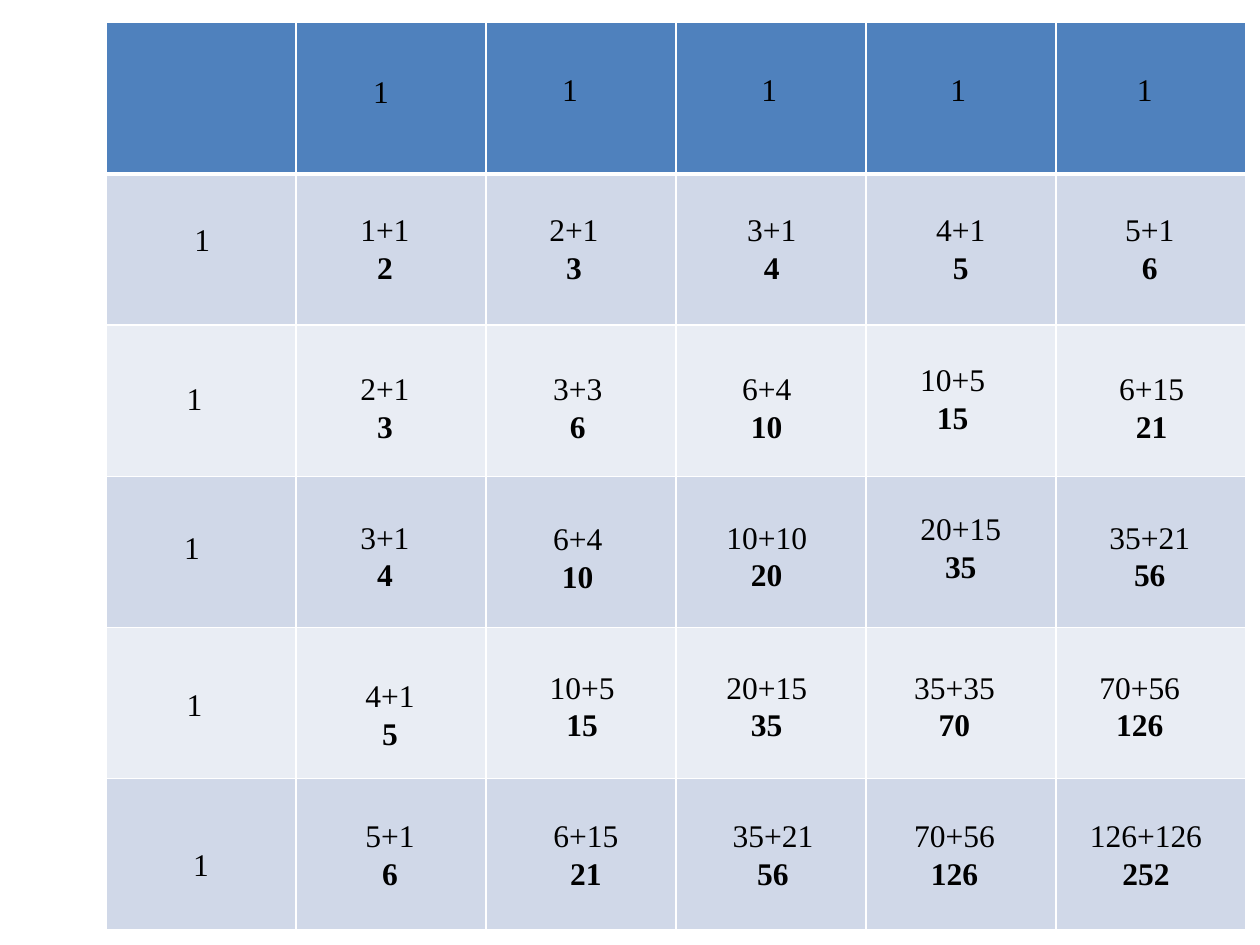
import pptx
import pptx.util
import pptx.dml.color
import pptx.enum.text
import pptx.oxml
import pptx.oxml.ns

Inches = pptx.util.Inches
Pt = pptx.util.Pt

SIZE = 6
HEAD = "4F81BD"
BANDS = ["E9EDF4", "D0D8E8"]
ROWS = [
    [("1", 2.02, 0.34), ("1", 3.52, 0.33), ("1", 5.1, 0.33),
     ("1", 6.6, 0.33), ("1", 8.08, 0.33)],
    [("1", 0.6, 1.52), ("1+1", 1.92, 1.44), ("2+1", 3.42, 1.44),
     ("3+1", 4.99, 1.44), ("4+1", 6.49, 1.44), ("5+1", 7.99, 1.44)],
    [("1", 0.54, 2.78), ("2+1", 1.92, 2.7), ("3+3", 3.45, 2.7),
     ("6+4", 4.95, 2.7), ("10+5", 6.36, 2.63), ("6+15", 7.94, 2.7)],
    [("1", 0.52, 3.96), ("3+1", 1.92, 3.88), ("6+4", 3.45, 3.89),
     ("10+10", 4.82, 3.88), ("20+15", 6.36, 3.81), ("35+21", 7.86, 3.88)],
    [("1", 0.54, 5.21), ("4+1", 1.96, 5.14), ("10+5", 3.42, 5.07),
     ("20+15", 4.82, 5.07), ("35+35", 6.31, 5.07), ("70+56", 7.78, 5.07)],
    [("1", 0.59, 6.48), ("5+1", 1.96, 6.25), ("6+15", 3.45, 6.25),
     ("35+21", 4.87, 6.25), ("70+56", 6.31, 6.25), ("126+126", 7.7, 6.25)],
]


def color(code):
    return pptx.dml.color.RGBColor.from_string(code)


def edge(cell, side, width):
    space = pptx.oxml.ns.nsdecls("a")
    line = pptx.oxml.parse_xml(
        f'<a:ln{side} {space} w="{Pt(width)}"><a:solidFill>'
        f'<a:srgbClr val="FFFFFF"/></a:solidFill></a:ln{side}>')
    cell._tc.get_or_add_tcPr().append(line)


def grid(slide, left, top, width, height):
    frame = slide.shapes.add_table(
        SIZE, SIZE, Inches(left), Inches(top), Inches(width), Inches(height))
    for row in range(SIZE):
        for col in range(SIZE):
            cell = frame.table.cell(row, col)
            edge(cell, "L", 1)
            edge(cell, "R", 1)
            edge(cell, "T", 3 if row == 1 else 1)
            edge(cell, "B", 3 if row == 0 else 1)
            cell.fill.solid()
            cell.fill.fore_color.rgb = color(BANDS[row % 2] if row else HEAD)


def label(slide, text, left, top):
    lines = [(text, None)]
    if "+" in text:
        total = sum(int(part) for part in text.split("+"))
        lines.append((str(total), True))
    box = slide.shapes.add_textbox(
        Inches(left), Inches(top), Inches(0.2 + 0.13 * len(text)),
        Inches(0.1 + 0.3 * len(lines)))
    frame = box.text_frame
    frame.word_wrap = False
    frame.auto_size = pptx.enum.text.MSO_AUTO_SIZE.SHAPE_TO_FIT_TEXT
    for index, (words, bold) in enumerate(lines):
        para = frame.add_paragraph() if index else frame.paragraphs[0]
        para.alignment = pptx.enum.text.PP_ALIGN.CENTER
        run = para.add_run()
        run.text = words
        run.font.name = "Times New Roman"
        run.font.size = Pt(18)
        run.font.bold = bold
        run.font.color.rgb = color("000000")


def sums(slide, left, top, width, height):
    grid(slide, left, top, width, height)
    for row in ROWS:
        for text, x, y in row:
            label(slide, text, left + x, top + y)


def main():
    deck = pptx.Presentation()
    deck.slide_width = Inches(10)
    deck.slide_height = Inches(7.5)
    slide = deck.slides.add_slide(deck.slide_layouts[6])
    sums(slide, 0.84, 0.18, 9.05, 7.2)
    deck.save("out.pptx")


if __name__ == "__main__":
    main()
